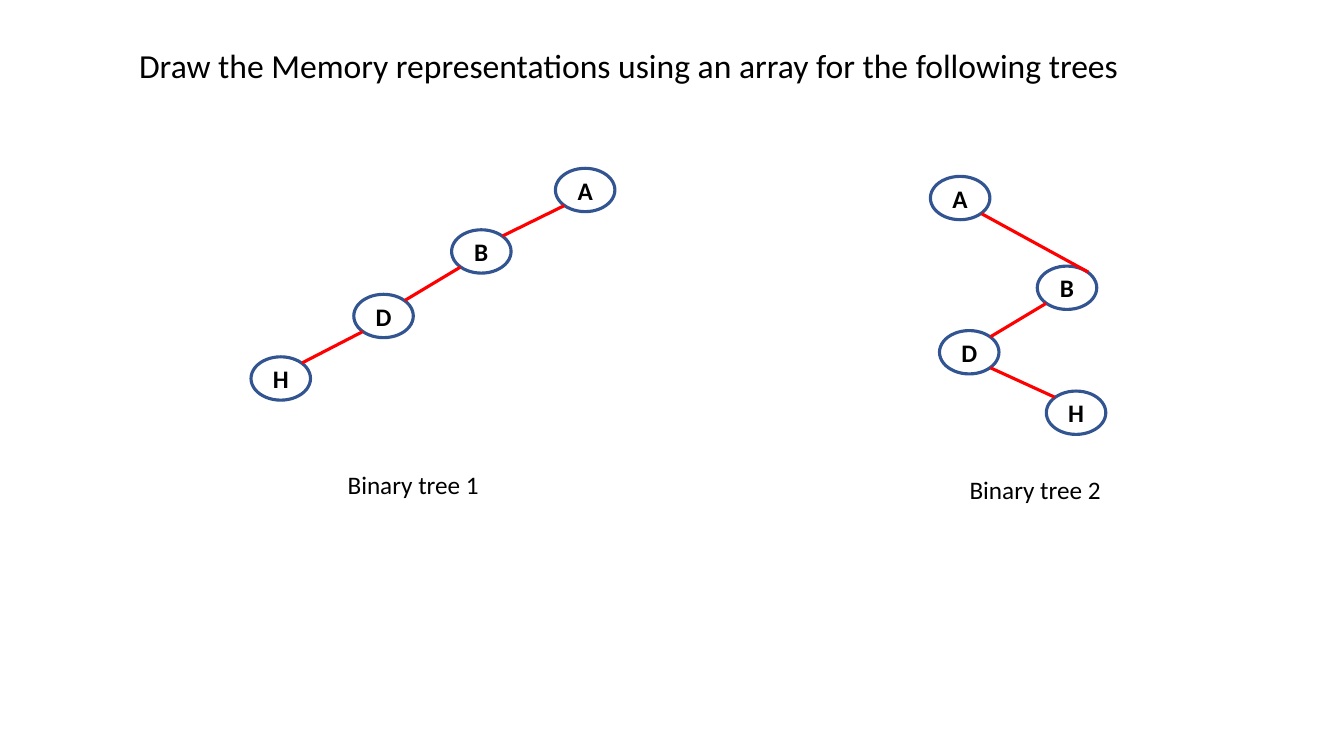
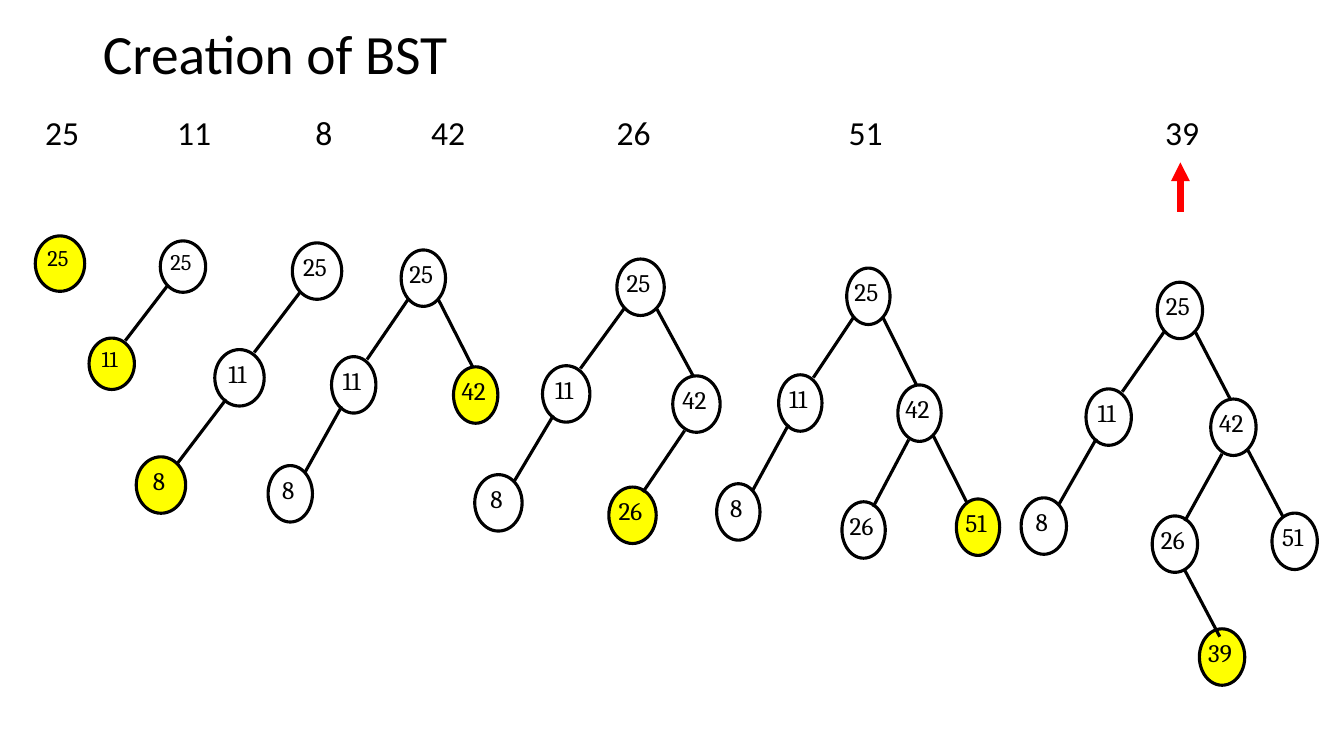
from lxml import etree
from pptx import Presentation
from pptx import util as u
from pptx.dml.color import RGBColor
from pptx.enum import shapes, text
from pptx.oxml.ns import qn

BLACK = RGBColor(0x00, 0x00, 0x00)
BLUE = RGBColor(0x32, 0x54, 0x91)
RED = RGBColor(0xFF, 0x00, 0x00)
YELLOW = RGBColor(0xFF, 0xFF, 0x00)

# Places on a node where edges meet it, as shares of its size
TOP_LEFT, TOP_RIGHT = (0.14, 0.14), (0.86, 0.14)
LOW_LEFT, LOW_RIGHT = (0.15, 0.86), (0.86, 0.86)


class TreeDeck:
    """Style, current slide and a grid with 75 rows of square cells."""

    ROWS, COLUMNS = 75, 133.33
    SANS, SERIF = "Calibri", "Cambria"

    def __init__(self):
        self.deck = Presentation()
        self.cell = u.Inches(7.5) / self.ROWS
        self.deck.slide_width = self.grid(self.COLUMNS)
        self.deck.slide_height = self.grid(self.ROWS)
        self.page = None

    def grid(self, cells):
        return u.Emu(round(cells * self.cell))

    def style(self, paragraph, size, name=SANS, bold=False):
        font = paragraph.font
        font.name, font.size, font.bold = name, u.Pt(size), bold
        font.color.rgb = BLACK

    def new_page(self, title, box, size):
        self.page = self.deck.slides.add_slide(self.deck.slide_layouts[5])
        holder = self.page.shapes.title
        holder.left, holder.top, holder.width, holder.height = map(self.grid, box)
        frame = holder.text_frame
        frame.text = title
        frame.word_wrap = True
        frame.auto_size = text.MSO_AUTO_SIZE.NONE
        frame.vertical_anchor = text.MSO_ANCHOR.MIDDLE
        para = frame.paragraphs[0]
        para.alignment = text.PP_ALIGN.LEFT
        para.line_spacing = 0.9
        self.style(para, size)

    def label(self, words, box, size, tabs=()):
        frame = self.page.shapes.add_textbox(*map(self.grid, box)).text_frame
        frame.word_wrap = True
        para = frame.paragraphs[0]
        para.text = words
        if tabs:
            stops = etree.SubElement(para._p.get_or_add_pPr(), qn("a:tabLst"))
            for stop in tabs:
                etree.SubElement(stops, qn("a:tab"), pos=str(self.grid(stop)), algn="l")
        self.style(para, size)

    def node(self, words, box, line=BLACK, fill=None, size=18, name=SERIF,
             bold=False, anchor=text.MSO_ANCHOR.TOP, inset=0.4):
        oval = self.page.shapes.add_shape(shapes.MSO_SHAPE.OVAL, *map(self.grid, box))
        oval.shadow.inherit = False
        oval.line.color.rgb = line
        oval.line.width = u.Pt(2.25)
        if fill is None:
            oval.fill.background()
        else:
            oval.fill.solid()
            oval.fill.fore_color.rgb = fill
        frame = oval.text_frame
        frame.word_wrap = False
        frame.margin_left = frame.margin_top = frame.margin_bottom = 0
        frame.margin_right = self.grid(inset)
        frame.vertical_anchor = anchor
        para = frame.paragraphs[0]
        para.text = words
        para.alignment = text.PP_ALIGN.CENTER
        self.style(para, size, name, bold)

    def line(self, start, end, color, width=2.25, arrow=False):
        line = self.page.shapes.add_connector(
            shapes.MSO_CONNECTOR.STRAIGHT, *map(self.grid, (*start, *end)))
        line.line.color.rgb = color
        line.line.width = u.Pt(width)
        if arrow:
            etree.SubElement(line.line._get_or_add_ln(), qn("a:tailEnd"), type="triangle")
        etree.SubElement(line._element.spPr, qn("a:effectLst"))

    def edge(self, parent, start, child, end, color=BLACK):
        def spot(box, share):
            left, top, width, height = box
            return left + share[0] * width, top + share[1] * height
        self.line(spot(parent, start), spot(child, end), color)


# Letter trees: caption, its place, nodes from the root down, edge ends
LETTER_TREES = [
    ("Binary tree 1", (33.5, 46.1),
     [("A", 55.1, 16.7), ("B", 44.8, 22.8), ("D", 35.1, 29.2), ("H", 24.9, 35.4)],
     [(LOW_LEFT, TOP_RIGHT)] * 3),
    ("Binary tree 2", (95.2, 46.6),
     [("A", 92.3, 17.5), ("B", 102.9, 26.4), ("D", 93.2, 32.8), ("H", 103.8, 38.8)],
     [(LOW_RIGHT, TOP_RIGHT), (LOW_LEFT, TOP_RIGHT), (LOW_RIGHT, TOP_LEFT)]),
]

# Search tree, in insertion order: key, parent, offset from the root in
# node widths and heights, edge start on the parent, edge end on the key
KEYS = [
    (25, None, (0, 0), None, None),
    (11, 25, (-1.57, 1.89), (0.16, 0.87), (0.8, 0.05)),
    (8, 11, (-3, 3.82), (0.23, 0.88), (0.83, 0.12)),
    (42, 25, (1.18, 2.07), (0.84, 0.88), (0.43, 0)),
    (26, 42, (-0.11, 4.14), (0.25, 0.97), (0.72, 0.09)),
    (51, 42, (2.53, 4.09), (0.81, 0.89), (0.24, 0.06)),
    (39, 26, (0.93, 6.14), (0.71, 0.95), (0.45, 0.14)),
]

# Root box, font size and adjusted offsets of the tree after each insertion
STAGES = [
    ((3.5, 23.4, 4.9, 5.5), 16, {}),
    ((15.9, 23.9, 4.5, 5.1), 16, {}),
    ((29, 24.1, 4.9, 5.6), 18, {8: (-3.16, 3.79)}),
    ((39.8, 24.8, 4.4, 5.6), 18, {}),
    ((61.2, 25.7, 4.7, 5.6), 18, {26: (-0.17, 4.04)}),
    ((84, 26.6, 4.3, 5.6), 18, {}),
    ((114.8, 28, 4.5, 5.6), 18, {}),
]


def letter_trees(deck):
    deck.new_page("Draw the Memory representations using an array for the following trees",
                  (12.8, 4.2, 102, 5), 24)
    for caption, place, nodes, ends in LETTER_TREES:
        boxes = [(left, top, 5.9, 4.3) for _, left, top in nodes]
        for (letter, *_), box in zip(nodes, boxes):
            deck.node(letter, box, BLUE, name=deck.SANS, bold=True,
                      anchor=text.MSO_ANCHOR.MIDDLE, inset=0)
        for parent, child, (start, end) in zip(boxes, boxes[1:], ends):
            deck.edge(parent, start, child, end, RED)
        deck.label(caption, (*place, 16, 4), 18)


def search_tree(deck, count, root, size, adjusted):
    left, top, width, height = root
    boxes = {}
    for key, parent, offset, start, end in KEYS[:count]:
        across, down = adjusted.get(key, offset)
        boxes[key] = (left + across * width, top + down * height, width, height)
        newest = key == KEYS[count - 1][0]
        deck.node(str(key), boxes[key], fill=YELLOW if newest else None, size=size)
        if parent:
            deck.edge(boxes[parent], start, boxes[key], end)


def search_tree_stages(deck):
    deck.new_page("Creation of BST", (9.2, 2, 115, 7.3), 39.6)
    # Inserted keys, with an arrow under the last one
    deck.label("\t".join(str(key) for key, *_ in KEYS), (3.5, 10.6, 127.3, 5), 24,
               tabs=(13.1, 26.8, 38.3, 56.7, 79.7, 111.1))
    deck.line((117.1, 21), (117.1, 16.1), RED, 4.5, arrow=True)
    for count, stage in enumerate(STAGES, 1):
        search_tree(deck, count, *stage)


def main():
    deck = TreeDeck()
    letter_trees(deck)
    search_tree_stages(deck)
    deck.deck.save("out.pptx")


if __name__ == "__main__":
    main()
